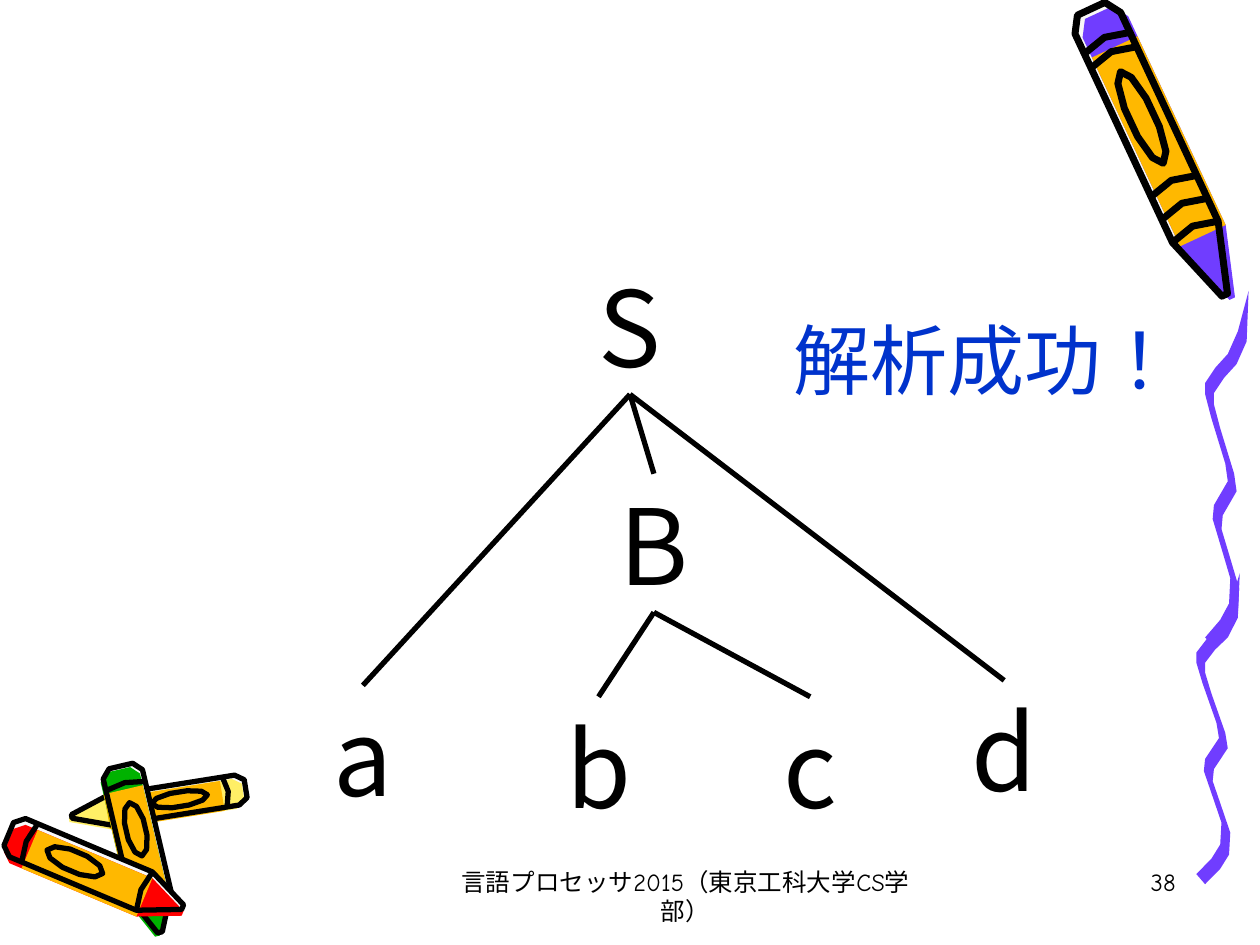
from dataclasses import dataclass
from math import cos, hypot, pi, sin

from lxml import etree
from pptx import Presentation
from pptx.dml.color import RGBColor
from pptx.enum.lang import MSO_LANGUAGE_ID
from pptx.enum.shapes import MSO_CONNECTOR
from pptx.enum.text import MSO_ANCHOR, PP_ALIGN
from pptx.oxml.ns import qn
from pptx.util import Inches, Pt

STRAIGHT = MSO_CONNECTOR.STRAIGHT
TOP, MIDDLE = MSO_ANCHOR.TOP, MSO_ANCHOR.MIDDLE
CENTER, RIGHT = PP_ALIGN.CENTER, PP_ALIGN.RIGHT
JAPANESE = MSO_LANGUAGE_ID.JAPANESE

BLACK = RGBColor(0x00, 0x00, 0x00)
BLUE = RGBColor(0x00, 0x33, 0xCC)
PURPLE = RGBColor(0x70, 0x3D, 0xFF)
ORANGE = RGBColor(0xFF, 0xB8, 0x00)
OFF_WHITE = RGBColor(0xF8, 0xF8, 0xF8)
YELLOW = RGBColor(0xFF, 0xEF, 0x66)
RED = RGBColor(0xFF, 0x00, 0x00)
GREEN = RGBColor(0x00, 0xB2, 0x00)

COMIC = "Comic Neue"
SANS = "Noto Sans CJK JP"

NODE_SIZE = 1.1
TREE_NODES = {
    "a": (2.33, 5.44), "b": (4.2, 5.53), "c": (5.88, 5.53),
    "d": (7.42, 5.4), "S": (4.45, 2.03), "B": (4.64, 3.76),
}
TREE_EDGES = ["Sa", "SB", "Sd", "Bb", "Bc"]

WRAPPER_START, WRAPPER_END = 0.12, 0.78
OVAL_MIDDLE, OVAL_LENGTH, OVAL_WIDTH = 0.38, 0.16, 0.25
OVAL_CORNERS = 10
SILHOUETTE = [(0, -0.3), (0, 0.3), (0.05, 0.5), (WRAPPER_END, 0.5),
              (1, 0.06), (1, -0.06), (WRAPPER_END, -0.5), (0.05, -0.5)]

NIB_X, NIB_Y = 0.035, 0.04
WAVE = [(0.35, 0), (0.3, 0.36), (0.22, 0.54), (0.12, 0.65), (0.04, 0.77), (0.04, 0.86),
        (0.09, 1.05), (0.2, 1.41), (0.22, 1.55), (0.11, 1.74), (0.1, 1.85), (0.16, 2.05),
        (0.24, 2.32), (0.23, 2.52), (0.16, 2.65), (0.04, 2.79)]


@dataclass
class Crayon:
    """A crayon from butt to tip, with its paint printed slightly out of place."""

    butt: tuple
    tip: tuple
    width: float
    wax: RGBColor
    misprint: tuple
    ink_weight: float = 3
    extra_bands: tuple = ()

    def place(self, points, shift=(0, 0)):
        """Turn (share of length, share of width) into slide inches."""
        run, rise = self.tip[0] - self.butt[0], self.tip[1] - self.butt[1]
        length = hypot(run, rise)
        across_x, across_y = -rise / length * self.width, run / length * self.width
        return [(self.butt[0] + along * run + across * across_x + shift[0],
                 self.butt[1] + along * rise + across * across_y + shift[1])
                for along, across in points]


CRAYONS = [
    Crayon((8.66, 0.07), (9.72, 2.34), 0.4, PURPLE, (0.06, 0.03), 4, (0.17, 0.62, 0.7)),
    Crayon((1.95, 6.26), (0.57, 6.48), 0.24, YELLOW, (-0.02, 0.03)),
    Crayon((0.96, 6.08), (1.27, 7.4), 0.32, GREEN, (-0.02, 0.03)),
    Crayon((0.07, 6.62), (1.45, 7.2), 0.33, RED, (0, 0.05)),
]


def trace(slide, points, closed=True):
    """Return a freeform through points given in inches."""
    corners = [(Inches(x), Inches(y)) for x, y in points]
    builder = slide.shapes.build_freeform(*corners[0])
    builder.add_line_segments(corners[1:], close=closed)
    outline = builder.convert_to_shape()
    outline.shadow.inherit = False
    return outline


def add_patch(slide, points, colour):
    """Fill an area without an outline."""
    patch = trace(slide, points)
    patch.fill.solid()
    patch.fill.fore_color.rgb = colour
    patch.line.fill.background()


def add_ink(slide, points, weight, closed=True):
    """Draw a black outline without a fill."""
    ink = trace(slide, points, closed)
    ink.fill.background()
    ink.line.color.rgb = BLACK
    ink.line.width = Pt(weight)


def add_crayon(slide, crayon):
    """Layer a crayon: white base, wax, wrapper, then ink lines."""
    wrapper = [(WRAPPER_START, -0.5), (WRAPPER_START, 0.5), (WRAPPER_END, 0.5), (WRAPPER_END, -0.5)]
    turns = [2 * pi * corner / OVAL_CORNERS for corner in range(OVAL_CORNERS)]
    oval = [(OVAL_MIDDLE + OVAL_LENGTH * cos(turn), OVAL_WIDTH * sin(turn)) for turn in turns]

    add_patch(slide, crayon.place(SILHOUETTE), OFF_WHITE)
    add_patch(slide, crayon.place(SILHOUETTE, crayon.misprint), crayon.wax)
    add_patch(slide, crayon.place(wrapper, crayon.misprint), ORANGE)
    for loop in (SILHOUETTE, oval):
        add_ink(slide, crayon.place(loop), crayon.ink_weight)
    for along in (WRAPPER_START, *crayon.extra_bands, WRAPPER_END):
        band = [(along, -0.5), (along - 0.02, 0), (along, 0.5)]
        add_ink(slide, crayon.place(band), crayon.ink_weight, closed=False)


def add_squiggle(slide, left, top, stretch=1):
    """Sweep a slanted nib down the wave, starting from a point."""
    centre = [(left + x, top + y * stretch) for x, y in WAVE]
    upper_edge = [(x - NIB_X, y - NIB_Y) for x, y in centre[1:]]
    lower_edge = [(x + NIB_X, y + NIB_Y) for x, y in centre[1:]]
    add_patch(slide, centre[:1] + upper_edge + lower_edge[::-1], PURPLE)


def add_branch(slide, start, end):
    """Draw a straight black line between two points in inches."""
    branch = slide.shapes.add_connector(STRAIGHT, *map(Inches, start + end))
    branch.line.color.rgb = BLACK
    branch.line.width = Pt(3)
    etree.SubElement(branch._element.spPr, qn("a:effectLst"))


def add_label(slide, text, box, size, font=COMIC, colour=BLACK, align=CENTER, anchor=MIDDLE):
    """Place one paragraph of text in a box given in inches."""
    frame = slide.shapes.add_textbox(*map(Inches, box)).text_frame
    frame.word_wrap = True
    frame.vertical_anchor = anchor
    frame.text = text
    paragraph = frame.paragraphs[0]
    paragraph.alignment = align
    run = paragraph.runs[0]
    run.font.name = font
    run.font.size = Pt(size)
    run.font.color.rgb = colour
    run.font.language_id = JAPANESE
    east_asian = etree.SubElement(run._r.get_or_add_rPr(), qn("a:ea"))
    east_asian.set("typeface", font)


def add_tree(slide):
    """Draw the parse tree, each edge from a parent's foot to a child's head."""
    half = NODE_SIZE / 2
    for symbol, corner in TREE_NODES.items():
        add_label(slide, symbol, (*corner, NODE_SIZE, NODE_SIZE), 60, font=SANS)
    for parent, child in TREE_EDGES:
        (parent_x, parent_y), (child_x, child_y) = TREE_NODES[parent], TREE_NODES[child]
        add_branch(slide, (parent_x + half, parent_y + NODE_SIZE), (child_x + half, child_y))


def main():
    """Build the slide and save it."""
    deck = Presentation()
    deck.slide_width, deck.slide_height = Inches(10), Inches(7.5)
    slide = deck.slides.add_slide(deck.slide_layouts[6])
    for crayon in CRAYONS:
        add_crayon(slide, crayon)
    add_squiggle(slide, 9.49, 4.55, stretch=0.87)
    add_squiggle(slide, 9.56, 2.31)
    add_tree(slide)
    add_label(slide, "解析成功！", (6.03, 2.43, 3.59, 0.83), 44, colour=BLUE)
    add_label(slide, "言語プロセッサ2015（東京工科大学CS学部）", (3.48, 6.83, 3.92, 0.5), 14, anchor=TOP)
    add_label(slide, "38", (7.35, 6.83, 2.08, 0.5), 14, align=RIGHT, anchor=TOP)
    deck.save("out.pptx")


if __name__ == "__main__":
    main()
